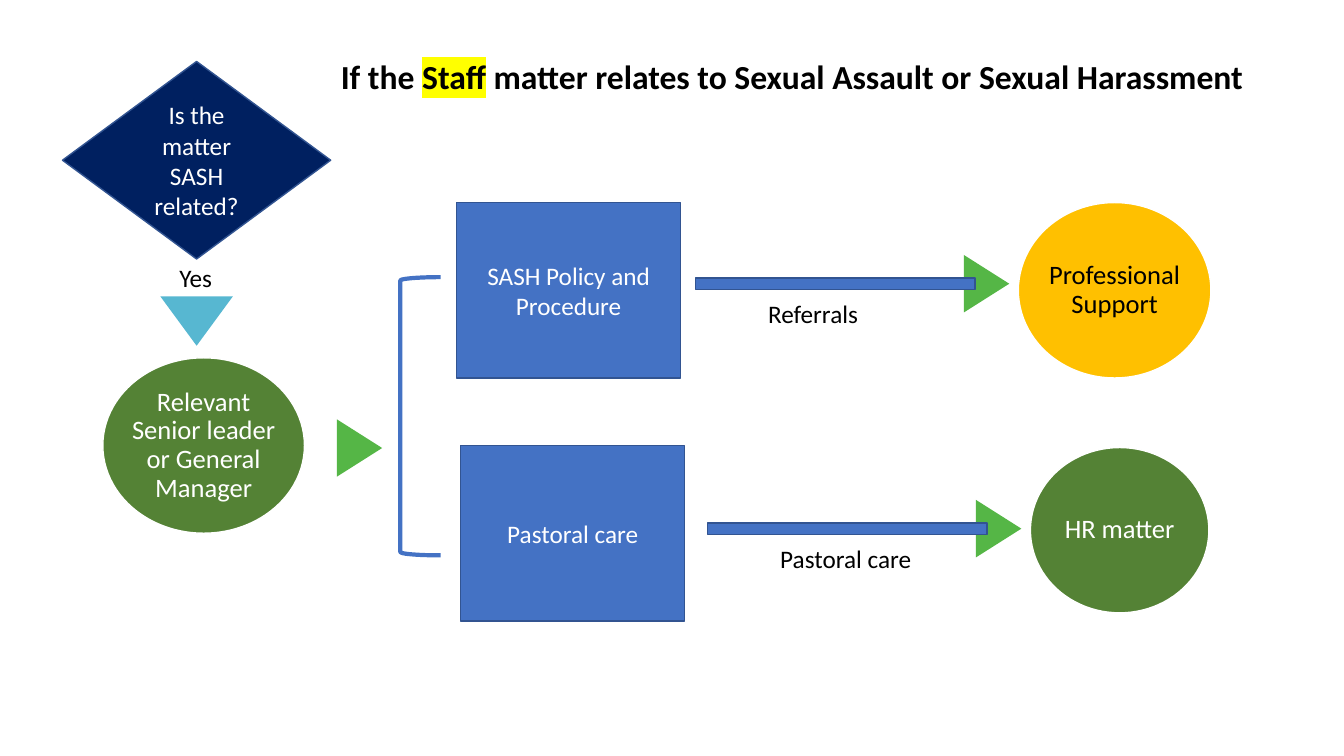
from dataclasses import dataclass

from lxml import etree
from pptx import Presentation
from pptx.dml.color import RGBColor
from pptx.enum.shapes import MSO_SHAPE
from pptx.enum.text import MSO_ANCHOR, MSO_AUTO_SIZE, PP_ALIGN
from pptx.oxml.ns import qn
from pptx.util import Inches, Pt

DIAMOND = MSO_SHAPE.DIAMOND
OVAL = MSO_SHAPE.OVAL
RECTANGLE = MSO_SHAPE.RECTANGLE
TRIANGLE = MSO_SHAPE.ISOSCELES_TRIANGLE
BRACKET = MSO_SHAPE.LEFT_BRACKET
MIDDLE, TOP = MSO_ANCHOR.MIDDLE, MSO_ANCHOR.TOP
CENTER, LEFT = PP_ALIGN.CENTER, PP_ALIGN.LEFT
NO_AUTOFIT = MSO_AUTO_SIZE.NONE
TITLE_ONLY_LAYOUT = 5

SLIDE_WIDTH, SLIDE_HEIGHT = Inches(13.33), Inches(7.5)
COLUMN, ROW = SLIDE_WIDTH / 133.3, SLIDE_HEIGHT / 75


@dataclass(frozen=True)
class Theme:
    font: str = "Calibri"
    title_size: int = 24
    circle_size: int = 19
    text_size: int = 18
    black: str = "000000"
    white: str = "FFFFFF"
    navy: str = "002060"
    blue: str = "4472C4"
    outline: str = "325491"
    green: str = "548235"
    arrow: str = "55B646"
    teal: str = "57B7D1"
    gold: str = "FFC000"
    highlight: str = "FFFF00"


THEME = Theme()


def color(value):
    return RGBColor.from_string(value)


def apply_format(target, values):
    for name, value in values.items():
        setattr(target, name, value)


def place(left, top, width, height):
    return [round(left * COLUMN), round(top * ROW), round(width * COLUMN), round(height * ROW)]


def add_run(paragraph, text, size, text_color, bold=False):
    run = paragraph.add_run()
    run.text = text
    apply_format(run.font, {"size": Pt(size), "bold": bold, "name": THEME.font})
    run.font.color.rgb = color(text_color)
    return run


def highlight_run(run, value):
    properties = run.font._element
    highlight = etree.Element(qn("a:highlight"))
    etree.SubElement(highlight, qn("a:srgbClr")).set("val", value)
    properties.find(qn("a:latin")).addprevious(highlight)


def add_figure(shapes, kind, box, fill=None, line=None, line_width=1, rotation=0):
    shape = shapes.add_shape(kind, *place(*box))
    shape.shadow.inherit = False
    shape.rotation = rotation
    if fill:
        shape.fill.solid()
        shape.fill.fore_color.rgb = color(fill)
    else:
        shape.fill.background()
    if line:
        shape.line.color.rgb = color(line)
        shape.line.width = Pt(line_width)
    else:
        shape.line.fill.background()
    return shape


def write_centered(shape, text, size, text_color, spacing=1.0):
    apply_format(shape.text_frame, {"word_wrap": True, "vertical_anchor": MIDDLE})
    paragraph = shape.text_frame.paragraphs[0]
    apply_format(paragraph, {"alignment": CENTER, "line_spacing": spacing})
    add_run(paragraph, text, size, text_color)


def add_box(shapes, kind, box, text, fill):
    shape = add_figure(shapes, kind, box, fill, THEME.outline)
    write_centered(shape, text, THEME.text_size, THEME.white)


def add_circle(shapes, box, text, fill, text_color):
    shape = add_figure(shapes, OVAL, box, fill, THEME.white)
    margin = Inches(-0.03)
    apply_format(shape.text_frame, {"margin_left": margin, "margin_right": margin})
    write_centered(shape, text, THEME.circle_size, text_color, 0.9)


def add_label(shapes, box, text):
    frame = shapes.add_textbox(*place(*box)).text_frame
    frame.word_wrap = False
    add_run(frame.paragraphs[0], text, THEME.text_size, THEME.black)


def add_pointer(shapes, left, top):
    add_figure(shapes, TRIANGLE, (left, top, 5.7, 4.5), THEME.arrow, rotation=90)


def add_labelled_arrow(slide, left, top, text, label_width):
    shapes = slide.shapes.add_group_shape().shapes
    add_pointer(shapes, left + 26, top - 1.7)
    add_figure(shapes, RECTANGLE, (left, top, 27.7, 1.1), THEME.blue, THEME.outline)
    add_label(shapes, (left + 6.2, top + 1.5, label_width, 4), text)


def add_title(slide):
    title = slide.shapes.title
    left, top, width, height = place(32.8, 5, 92.6, 5)
    apply_format(title, {"left": left, "top": top, "width": width, "height": height})
    frame = title.text_frame
    apply_format(frame, {"word_wrap": False, "auto_size": NO_AUTOFIT, "vertical_anchor": TOP})
    paragraph = frame.paragraphs[0]
    paragraph.alignment = LEFT
    parts = ["If the ", "Staff", " matter relates to Sexual Assault or Sexual Harassment"]
    runs = [add_run(paragraph, part, THEME.title_size, THEME.black, True) for part in parts]
    highlight_run(runs[1], THEME.highlight)


def main():
    presentation = Presentation()
    apply_format(presentation, {"slide_width": SLIDE_WIDTH, "slide_height": SLIDE_HEIGHT})
    slide = presentation.slides.add_slide(presentation.slide_layouts[TITLE_ONLY_LAYOUT])
    shapes = slide.shapes
    add_title(slide)

    add_box(shapes, DIAMOND, (6.2, 6.1, 26.6, 19.6), "Is the matter SASH related?", THEME.navy)
    add_label(shapes, (16.8, 25.5, 5.3, 4), "Yes")
    add_figure(shapes, TRIANGLE, (15.9, 29.4, 7.2, 4.9), THEME.teal, rotation=180)
    add_circle(shapes, (10.2, 35.5, 20, 17.4), "Relevant Senior leader or General Manager",
               THEME.green, THEME.white)
    add_pointer(shapes, 32.8, 42.2)
    add_figure(shapes, BRACKET, (39.7, 27.5, 4, 27.6), line=THEME.blue, line_width=3)

    add_box(shapes, RECTANGLE, (45.3, 20.1, 22.2, 17.4), "SASH Policy and Procedure", THEME.blue)
    add_labelled_arrow(slide, 69, 27.6, "Referrals", 11)
    add_circle(shapes, (101, 20.1, 19.1, 17.4), "Professional Support", THEME.gold, THEME.black)

    add_box(shapes, RECTANGLE, (45.7, 44.2, 22.2, 17.4), "Pastoral care", THEME.blue)
    add_labelled_arrow(slide, 70.2, 51.9, "Pastoral care", 15.1)
    add_circle(shapes, (102.2, 44.4, 17.7, 16.4), "HR matter", THEME.green, THEME.white)

    presentation.save("out.pptx")


if __name__ == "__main__":
    main()
